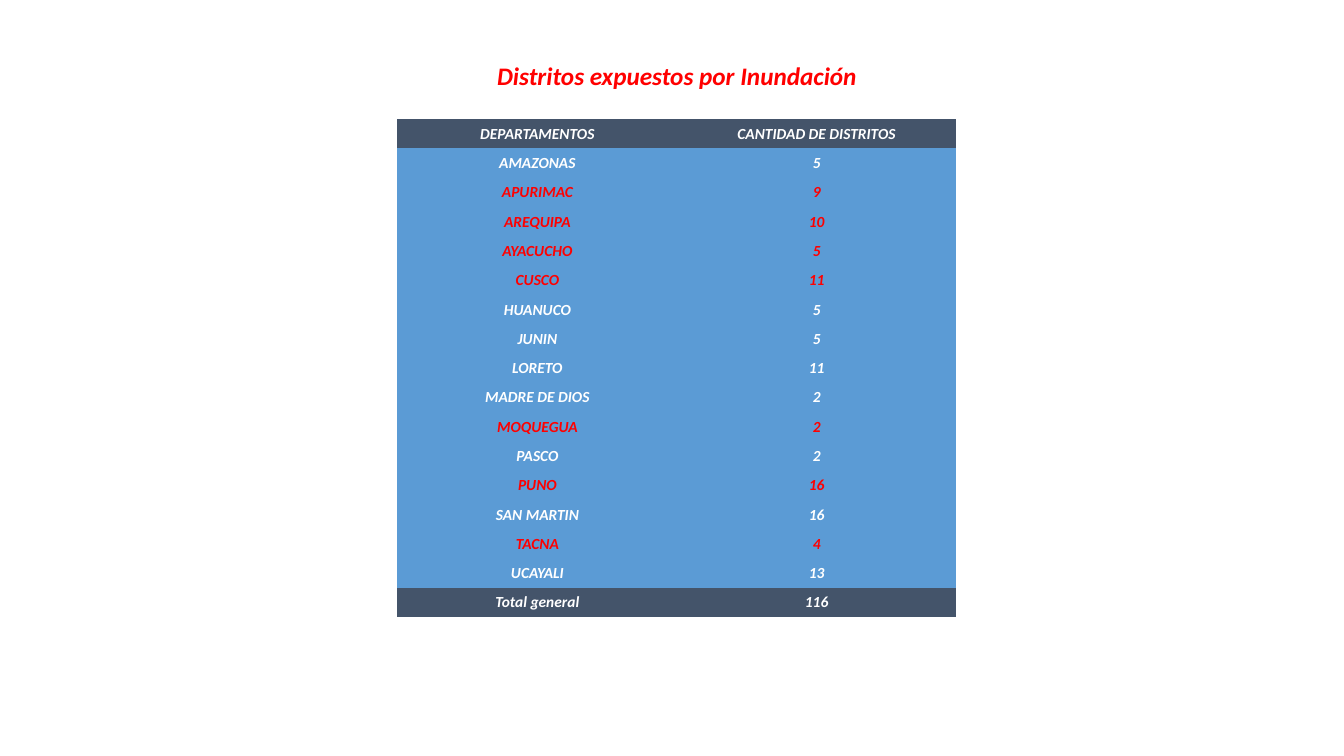
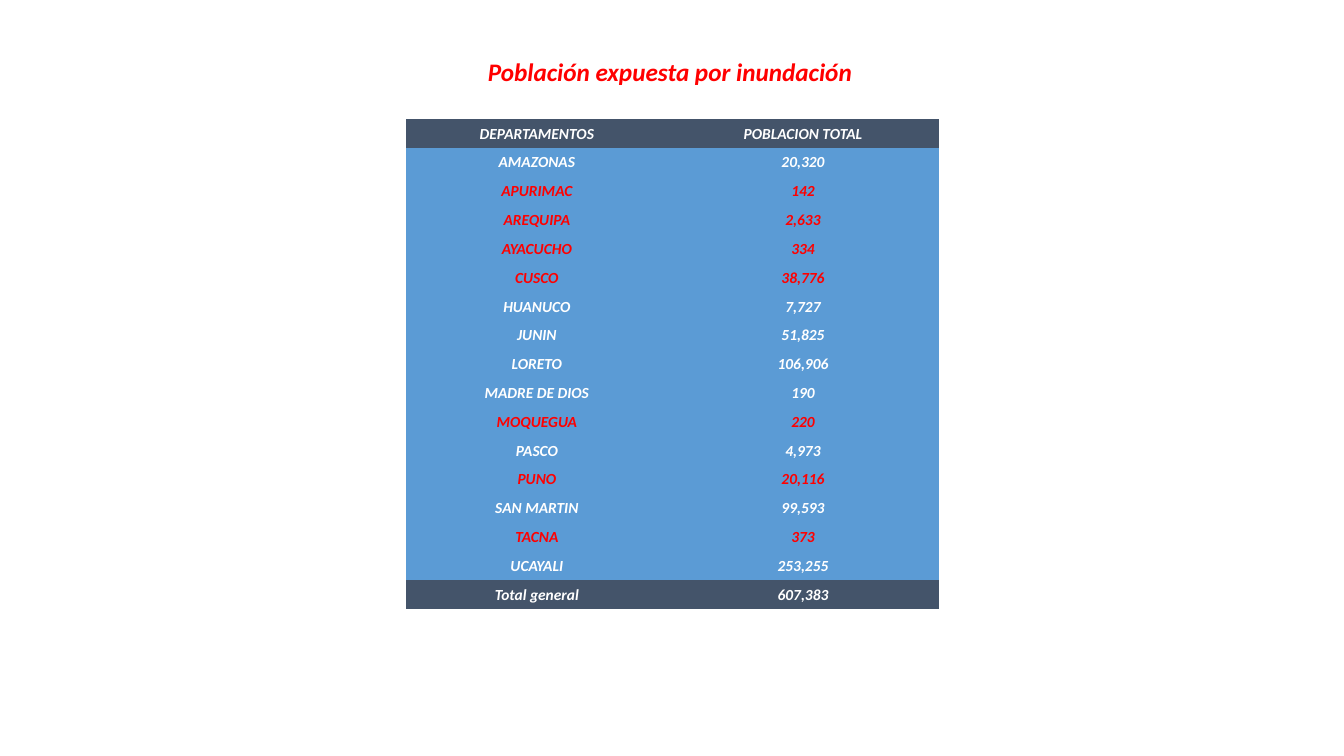
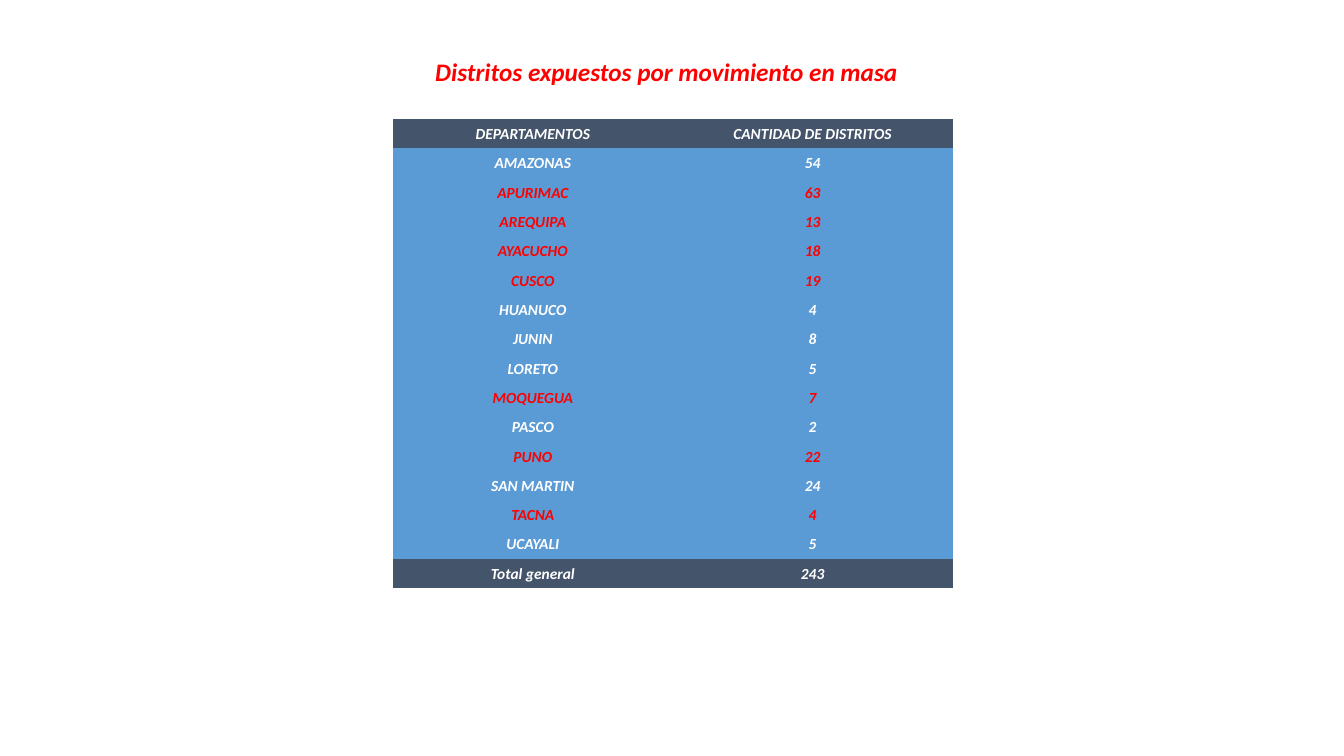
from pptx import Presentation
from pptx.dml.color import RGBColor
from pptx.enum.text import MSO_ANCHOR, MSO_AUTO_SIZE, PP_ALIGN
from pptx.oxml.ns import qn
from pptx.util import Inches, Pt

RED = RGBColor(0xFF, 0x00, 0x00)
WHITE = RGBColor(0xFF, 0xFF, 0xFF)
SLATE = RGBColor(0x44, 0x54, 0x6A)
BLUE = RGBColor(0x5B, 0x9B, 0xD5)

PLAIN_TABLE_STYLE = "{2D5ABB26-0587-4C30-8999-92F81FD0307C}"
TITLE_FONT = {"name": "Calibri", "size": Pt(18), "bold": True, "italic": True}
CELL_FONT = {**TITLE_FONT, "size": Pt(11)}
TITLE_FRAME = {
    "word_wrap": False,
    "auto_size": MSO_AUTO_SIZE.NONE,
    "vertical_anchor": MSO_ANCHOR.MIDDLE,
}
CELL_FORMAT = {
    "margin_left": Inches(0.01),
    "margin_right": Inches(0.01),
    "margin_top": Inches(0.01),
    "margin_bottom": 0,
    "vertical_anchor": MSO_ANCHOR.MIDDLE,
}

HIGHLIGHTED = {
    "APURIMAC", "AREQUIPA", "AYACUCHO", "CUSCO", "MOQUEGUA", "PUNO", "TACNA",
}
DEPARTMENTS = [
    "AMAZONAS", "APURIMAC", "AREQUIPA", "AYACUCHO", "CUSCO", "HUANUCO",
    "JUNIN", "LORETO", "MADRE DE DIOS", "MOQUEGUA", "PASCO", "PUNO",
    "SAN MARTIN", "TACNA", "UCAYALI",
]
MASS_MOVEMENT_DEPARTMENTS = [d for d in DEPARTMENTS if d != "MADRE DE DIOS"]

REPORTS = [
    {
        "title": "Distritos expuestos por Inundación",
        "title_box": (4.81, 0.55, 3.81, 0.4),
        "table_box": (3.94, 1.18, 5.54, 4.94),
        "first_column": 2.78,
        "measure": "CANTIDAD DE DISTRITOS",
        "departments": DEPARTMENTS,
        "values": [5, 9, 10, 5, 11, 5, 5, 11, 2, 2, 2, 16, 16, 4, 13],
        "total": 116,
    },
    {
        "title": "Población expuesta por inundación",
        "title_box": (4.72, 0.51, 3.85, 0.4),
        "table_box": (4.03, 1.18, 5.28, 4.86),
        "first_column": 2.59,
        "measure": "POBLACION TOTAL",
        "departments": DEPARTMENTS,
        "values": [20320, 142, 2633, 334, 38776, 7727, 51825, 106906, 190,
                   220, 4973, 20116, 99593, 373, 253255],
        "total": 607383,
    },
    {
        "title": "Distritos expuestos por movimiento en masa",
        "title_box": (4.16, 0.51, 4.9, 0.4),
        "table_box": (3.9, 1.18, 5.55, 4.66),
        "first_column": 2.77,
        "measure": "CANTIDAD DE DISTRITOS",
        "departments": MASS_MOVEMENT_DEPARTMENTS,
        "values": [54, 63, 13, 18, 19, 4, 8, 5, 7, 2, 22, 24, 4, 5],
        "total": 243,
    },
]


def apply_format(target, values):
    """Set each named attribute on the target."""
    for attribute, value in values.items():
        setattr(target, attribute, value)


def write_centred(text_frame, text, font, colour):
    """Write one centred line in the given font and colour."""
    text_frame.text = text
    line = text_frame.paragraphs[0]
    line.alignment = PP_ALIGN.CENTER
    run = line.runs[0]
    apply_format(run.font, font)
    run.font.color.rgb = colour


def place_title(slide, text, box):
    """Move the title placeholder into the box and style it."""
    title = slide.shapes.title
    edges = ("left", "top", "width", "height")
    apply_format(title, dict(zip(edges, map(Inches, box))))
    apply_format(title.text_frame, TITLE_FRAME)
    write_centred(title.text_frame, text, TITLE_FONT, RED)


def place_table(slide, rows, box, first_column):
    """Fill the box with a table whose first and last rows are dark."""
    left, top, width, height = map(Inches, box)
    frame = slide.shapes.add_table(len(rows), 2, left, top, width, height)
    frame.element.find(".//" + qn("a:tableStyleId")).text = PLAIN_TABLE_STYLE
    table = frame.table
    apply_format(table, {"first_row": False, "horz_banding": False})
    table.columns[0].width = Inches(first_column)
    table.columns[1].width = width - Inches(first_column)
    for index, row in enumerate(rows):
        table.rows[index].height = height // len(rows)
        fill = SLATE if index in (0, len(rows) - 1) else BLUE
        colour = RED if row[0] in HIGHLIGHTED else WHITE
        for cell, text in zip(table.rows[index].cells, row):
            apply_format(cell, CELL_FORMAT)
            cell.fill.solid()
            cell.fill.fore_color.rgb = fill
            write_centred(cell.text_frame, text, CELL_FONT, colour)


def add_report(deck, report):
    """Add one slide with a title and its table of departments."""
    slide = deck.slides.add_slide(deck.slide_layouts[5])
    place_title(slide, report["title"], report["title_box"])
    counts = [f"{value:,}" for value in report["values"]]
    rows = [
        ("DEPARTAMENTOS", report["measure"]),
        *zip(report["departments"], counts),
        ("Total general", f"{report['total']:,}"),
    ]
    place_table(slide, rows, report["table_box"], report["first_column"])


def main():
    """Build and save the deck."""
    deck = Presentation()
    deck.slide_width = Inches(13.33)
    deck.slide_height = Inches(7.5)
    for report in REPORTS:
        add_report(deck, report)
    deck.save("out.pptx")


if __name__ == "__main__":
    main()
